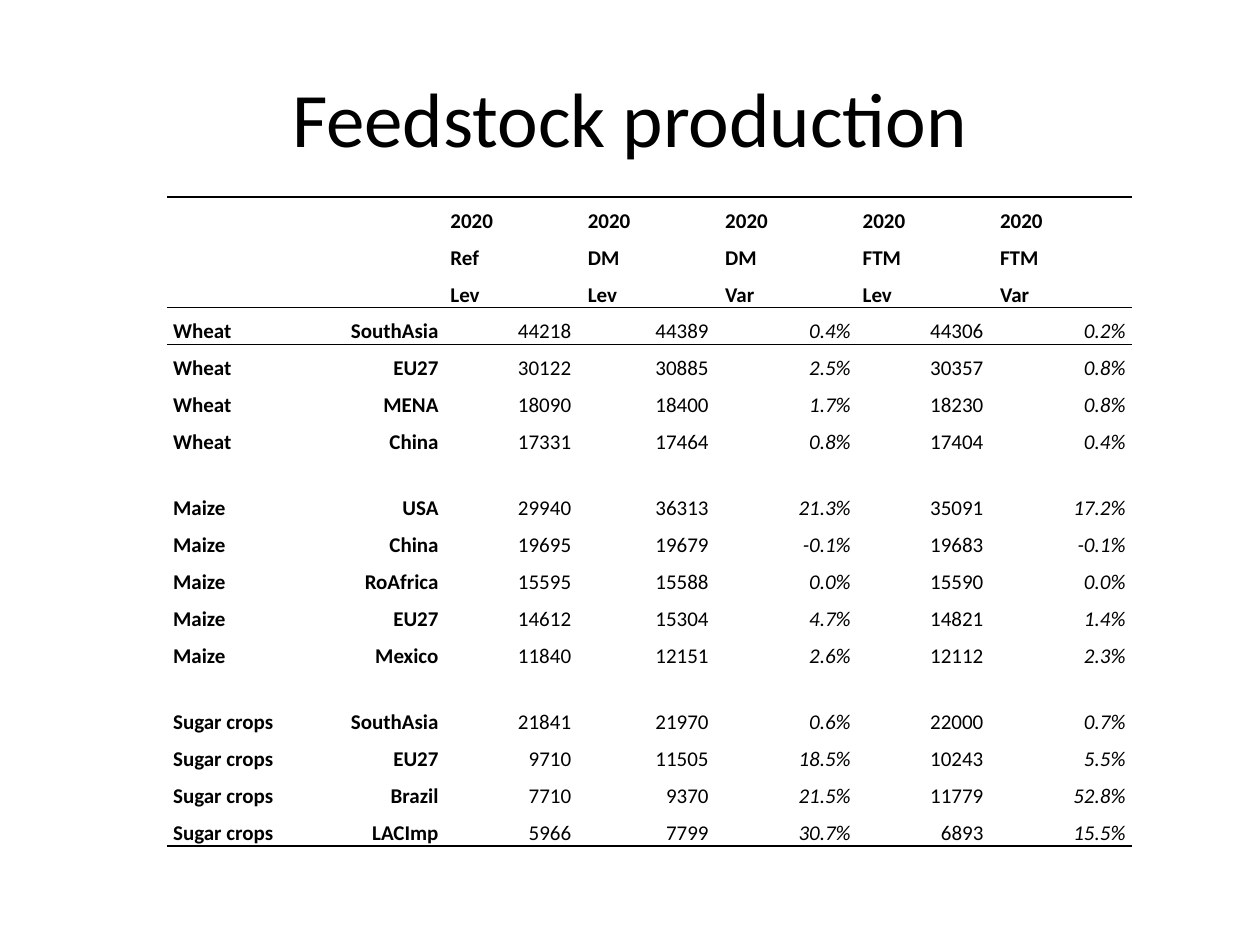
"""Build the feedstock production slide with its results table."""
from dataclasses import dataclass

from lxml.etree import SubElement
from pptx import Presentation
from pptx.dml.color import RGBColor
from pptx.enum.text import MSO_ANCHOR, PP_ALIGN
from pptx.oxml.ns import qn
from pptx.util import Cm, Pt


@dataclass(frozen=True)
class Theme:
    """Colours, type sizes and line settings."""
    font: str = "Calibri"
    ink: str = "000000"
    title_size: int = 44
    table_size: int = 12
    gap_size: int = 10
    line_spacing: float = 1.15
    rule_width: int = 1
    plain_table: str = "{2D5ABB26-0587-4C30-8999-92F81FD0307C}"


def apply(target, formats):
    """Set each format value on the target."""
    for attribute, value in formats.items():
        setattr(target, attribute, value)


class SlideBuilder:
    """Hold the theme and the current slide."""

    def __init__(self, slide, theme):
        self.slide = slide
        self.theme = theme

    def add_text(self, paragraph, wording, size, align, bold=False, italic=False):
        """Add one styled run to a paragraph."""
        paragraph.alignment = align
        run = paragraph.add_run()
        run.text = wording
        apply(run.font, {"name": self.theme.font, "size": Pt(size), "bold": bold, "italic": italic})
        run.font.color.rgb = RGBColor.from_string(self.theme.ink)

    def title(self, wording, left, top, width, height):
        """Add the centred heading."""
        heading = self.slide.shapes.add_textbox(Cm(left), Cm(top), Cm(width), Cm(height))
        apply(heading.text_frame, {"word_wrap": True, "vertical_anchor": MSO_ANCHOR.MIDDLE})
        self.add_text(heading.text_frame.paragraphs[0], wording, self.theme.title_size, PP_ALIGN.CENTER)

    def rule(self, cell, side):
        """Draw a line on one side of a cell."""
        edge = SubElement(cell._tc.get_or_add_tcPr(), qn(f"a:ln{side}"), w=str(Pt(self.theme.rule_width)))
        SubElement(SubElement(edge, qn("a:solidFill")), qn("a:srgbClr"), val=self.theme.ink)

    def cell(self, cell, wording, align, bold, italic, sides):
        """Fill one table cell and draw its rules."""
        apply(cell, {
            "vertical_anchor": MSO_ANCHOR.BOTTOM,
            "margin_left": Cm(0.12), "margin_right": Cm(0.12),
            "margin_top": 0, "margin_bottom": 0,
        })
        paragraph = cell.text_frame.paragraphs[0]
        if wording:
            paragraph.line_spacing = self.theme.line_spacing
            self.add_text(paragraph, wording, self.theme.table_size, align, bold, italic)
        else:
            SubElement(paragraph._p, qn("a:endParaRPr"), sz=str(self.theme.gap_size * 100))
        for side in sides:
            self.rule(cell, side)
        cell.fill.background()

    def table(self, rows, header_count, left, top, widths, height, gap_height):
        """Add the table with rules around its header and below its body."""
        frame = self.slide.shapes.add_table(
            len(rows), len(widths), Cm(left), Cm(top), Cm(sum(widths)), Cm(height))
        grid = frame.table
        apply(grid, {"first_row": False, "horz_banding": False})
        next(frame.element.iter(qn("a:tableStyleId"))).text = self.theme.plain_table
        for column, width in zip(grid.columns, widths):
            column.width = Cm(width)
        gap_count = sum(not any(row) for row in rows)
        row_height = (height - gap_count * gap_height) / (len(rows) - gap_count)
        sides_by_row = {0: "T", header_count - 1: "B", header_count: "T", len(rows) - 1: "B"}
        for r, row in enumerate(rows):
            grid.rows[r].height = Cm(row_height if any(row) else gap_height)
            is_header = r < header_count
            for c, wording in enumerate(row):
                align = PP_ALIGN.LEFT if is_header or c == 0 else PP_ALIGN.RIGHT
                self.cell(grid.cell(r, c), wording, align, is_header or c < 2,
                          wording.endswith("%"), sides_by_row.get(r, ""))


HEADER = [
    ["", "", "2020", "2020", "2020", "2020", "2020"],
    ["", "", "Ref", "DM", "DM", "FTM", "FTM"],
    ["", "", "Lev", "Lev", "Var", "Lev", "Var"],
]

CROPS = {
    "Wheat": [
        ("SouthAsia", 44218, 44389, 0.4, 44306, 0.2),
        ("EU27", 30122, 30885, 2.5, 30357, 0.8),
        ("MENA", 18090, 18400, 1.7, 18230, 0.8),
        ("China", 17331, 17464, 0.8, 17404, 0.4),
    ],
    "Maize": [
        ("USA", 29940, 36313, 21.3, 35091, 17.2),
        ("China", 19695, 19679, -0.1, 19683, -0.1),
        ("RoAfrica", 15595, 15588, 0.0, 15590, 0.0),
        ("EU27", 14612, 15304, 4.7, 14821, 1.4),
        ("Mexico", 11840, 12151, 2.6, 12112, 2.3),
    ],
    "Sugar crops": [
        ("SouthAsia", 21841, 21970, 0.6, 22000, 0.7),
        ("EU27", 9710, 11505, 18.5, 10243, 5.5),
        ("Brazil", 7710, 9370, 21.5, 11779, 52.8),
        ("LACImp", 5966, 7799, 30.7, 6893, 15.5),
    ],
}


def production_rows():
    """Return header and crop rows with a gap row between crops."""
    rows = list(HEADER)
    for crop, regions in CROPS.items():
        if len(rows) > len(HEADER):
            rows.append([""] * len(HEADER[0]))
        for region, *figures in regions:
            shown = [f"{n:.1f}%" if isinstance(n, float) else f"{n} " for n in figures]
            rows.append([crop, region, *shown])
    return rows


def main():
    """Build and save the presentation."""
    deck = Presentation()
    apply(deck, {"slide_width": Cm(25.4), "slide_height": Cm(19.05)})
    builder = SlideBuilder(deck.slides.add_slide(deck.slide_layouts[6]), Theme())
    builder.title("Feedstock production", 1.27, 0.76, 22.86, 3.18)
    builder.table(production_rows(), len(HEADER), left=3.37, top=3.97,
                  widths=[2.82] + [2.77] * 6, height=13.09, gap_height=0.59)
    deck.save("out.pptx")


if __name__ == "__main__":
    main()
